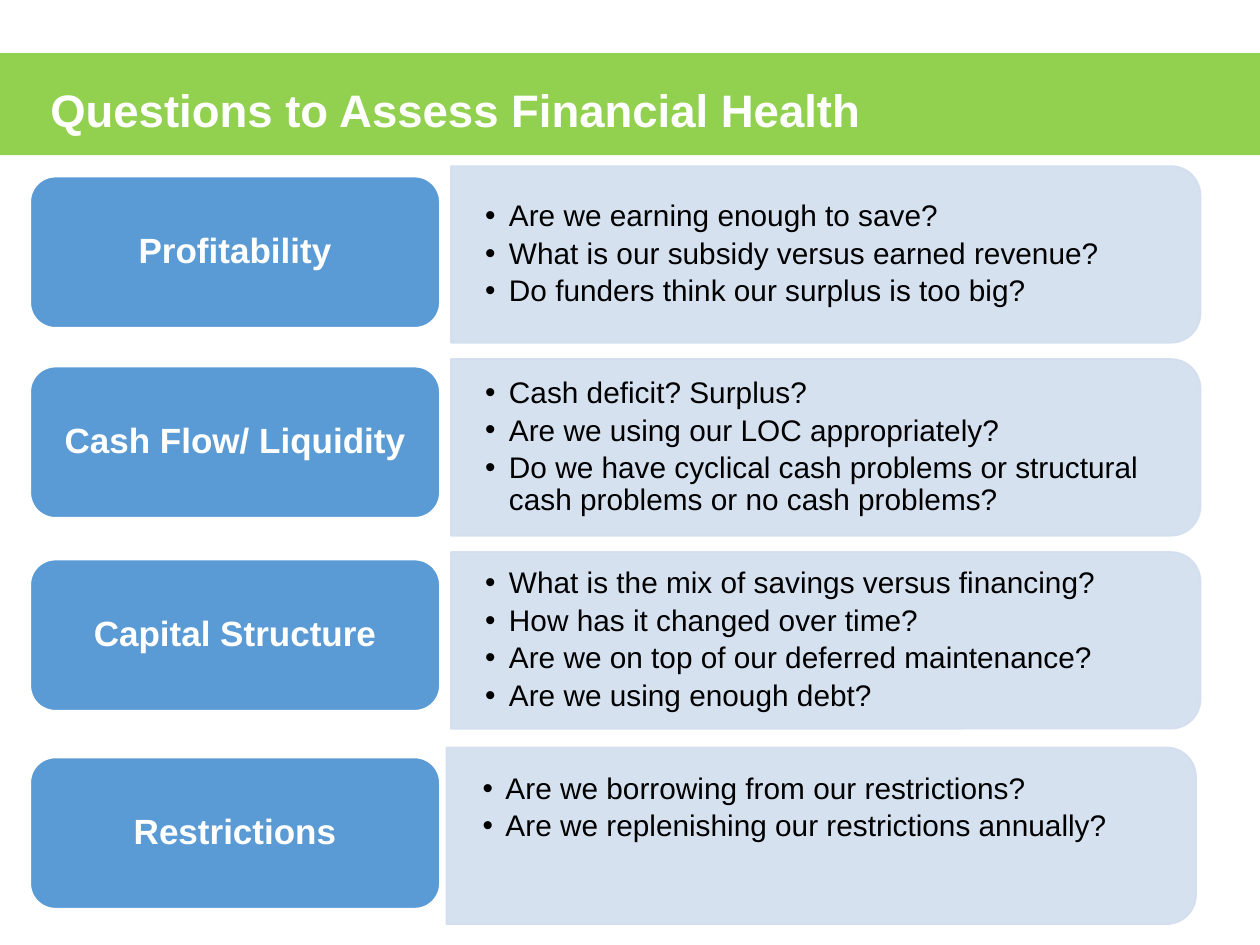
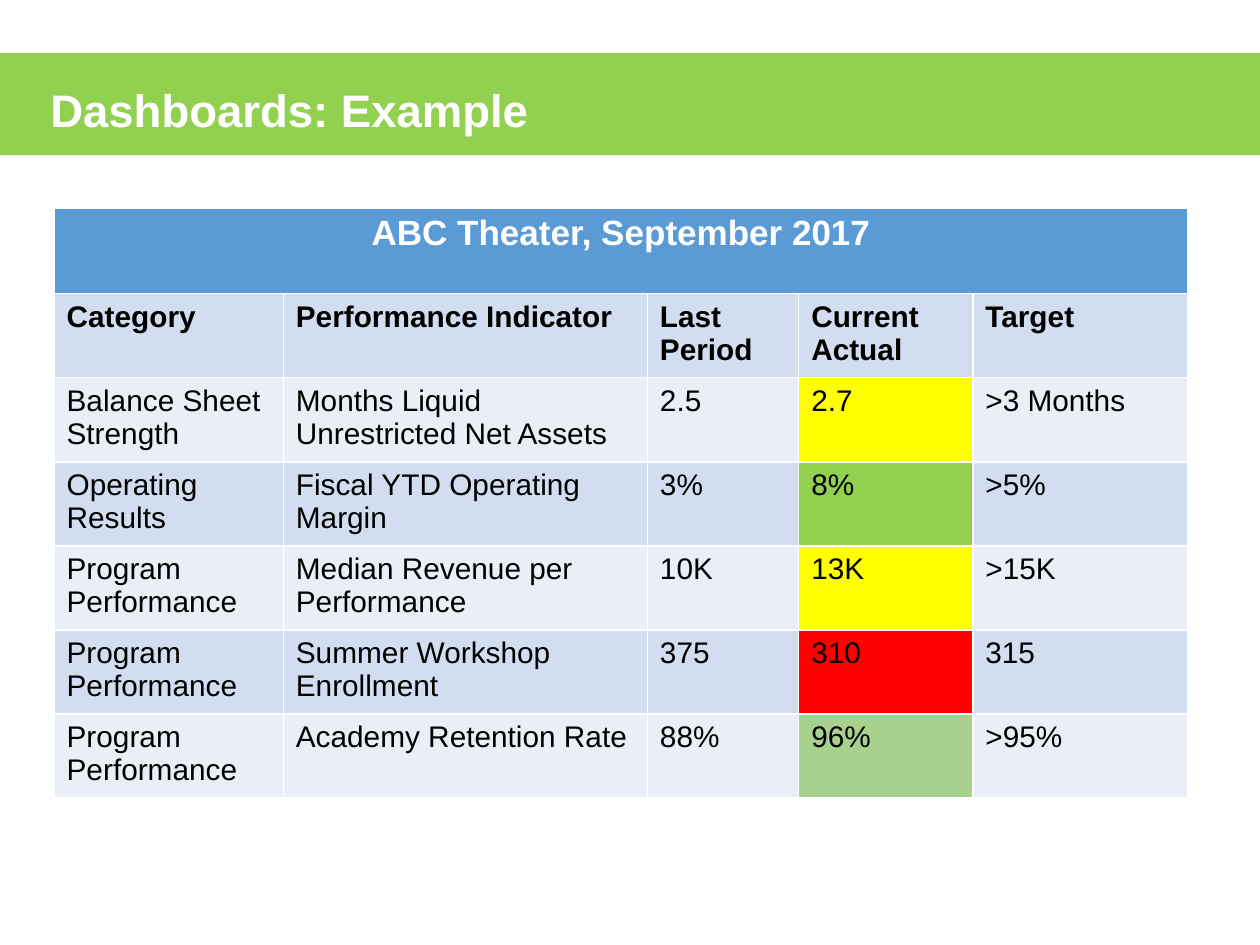
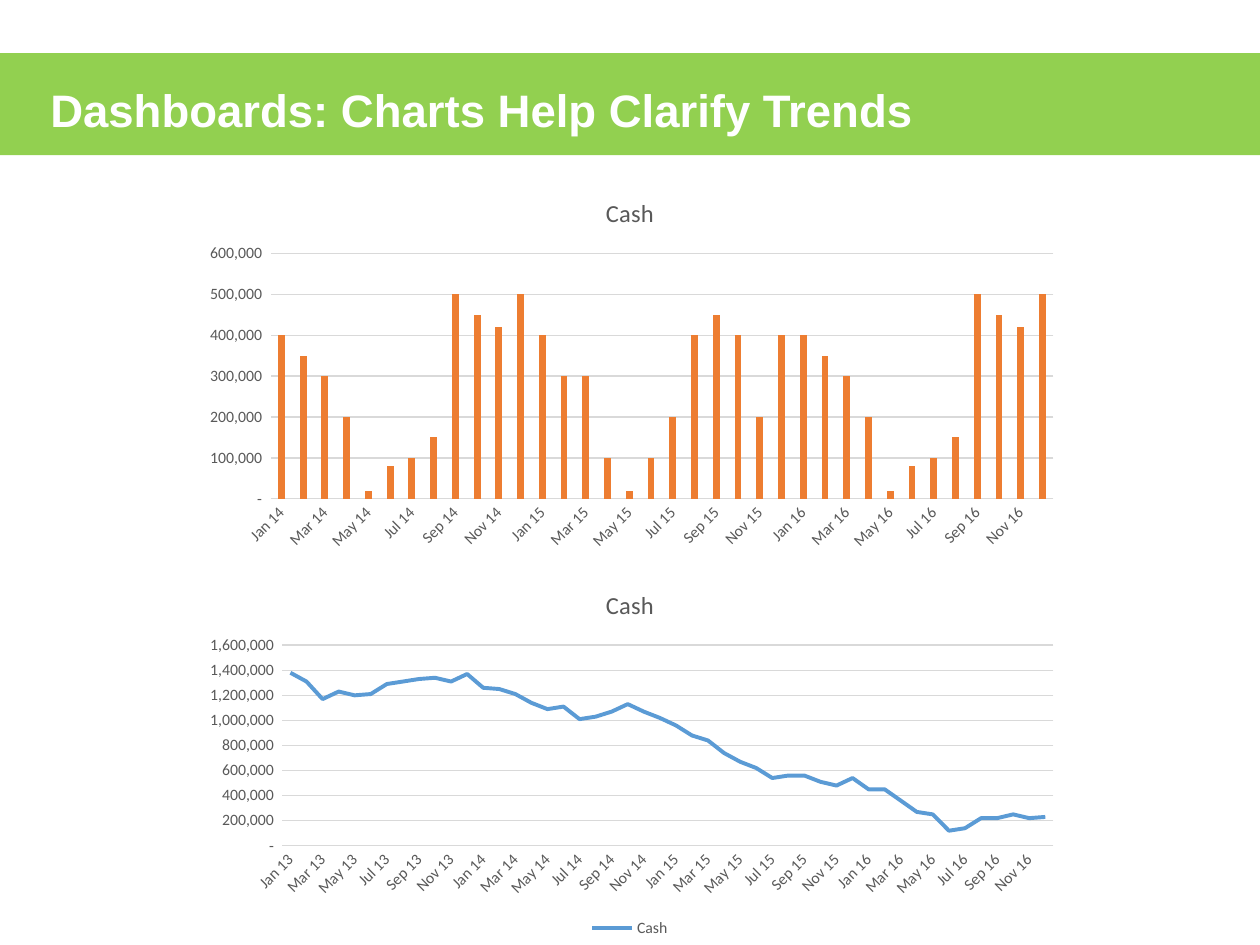
from dataclasses import dataclass
from itertools import product

from lxml import etree
from pptx import Presentation
from pptx import util as u
from pptx.chart.data import CategoryChartData
from pptx.dml.color import RGBColor
from pptx.enum import chart as ch
from pptx.enum import shapes, text
from pptx.oxml.ns import qn

WHITE = RGBColor(0xFF, 0xFF, 0xFF)
BLACK = RGBColor(0x00, 0x00, 0x00)
GREEN = RGBColor(0x92, 0xD0, 0x50)
BLUE = RGBColor(0x5B, 0x9B, 0xD5)
PALE_BLUE = RGBColor(0xD2, 0xDE, 0xEF)
PALEST_BLUE = RGBColor(0xEA, 0xEF, 0xF7)
YELLOW = RGBColor(0xFF, 0xFF, 0x00)
RED = RGBColor(0xFF, 0x00, 0x00)
SOFT_GREEN = RGBColor(0xA9, 0xD1, 0x8E)
ORANGE = RGBColor(0xED, 0x7D, 0x31)
CHART_TEXT = RGBColor(0x59, 0x59, 0x59)
CHART_LINE = RGBColor(0xD9, 0xD9, 0xD9)

SLIDE_WIDTH = 25.4
COMPARISON, TITLE_ONLY = 4, 5
ACCOUNTING = '_(* #,##0_);_(* \\(#,##0\\);_(* "-"_);_(@_)'
MONTHS = "Jan Feb Mar Apr May Jun Jul Aug Sep Oct Nov Dec".split()


@dataclass(frozen=True)
class Box:
    """A frame in centimetres."""
    left: float
    top: float
    width: float
    height: float

    def lengths(self) -> tuple:
        return tuple(map(u.Cm, (self.left, self.top, self.width, self.height)))

    def place(self, sp) -> None:
        sp.left, sp.top, sp.width, sp.height = self.lengths()


@dataclass(frozen=True)
class ListStyle:
    """Insets (left, top, right, bottom) and bullet indents in centimetres."""
    insets: tuple
    margin: float
    hanging: float


PANEL_LIST = ListStyle((0.69, 0.53, 0.86, 0.53), 0.48, 0.48)
LOOSE_LIST = ListStyle((0.08, 0.05, 0.08, 0.5), 1.09, 0.46)


@dataclass(frozen=True)
class Topic:
    name: str
    label_top: float
    panel: Box
    list_box: Box
    style: ListStyle
    questions: tuple


def panel_topic(name: str, label_top: float, panel_top: float, *questions: str) -> Topic:
    panel = Box(9.09, panel_top, 15.11, 3.56)
    return Topic(name, label_top, panel, panel, PANEL_LIST, questions)


TOPICS = (
    panel_topic("Profitability", 3.56, 3.35,
                "Are we earning enough to save?",
                "What is our subsidy versus earned revenue?",
                "Do funders think our surplus is too big?"),
    panel_topic("Cash Flow/ Liquidity", 7.39, 7.24,
                "Cash deficit? Surplus?",
                "Are we using our LOC appropriately?",
                "Do we have cyclical cash problems or structural cash problems or no cash problems?"),
    panel_topic("Capital Structure", 11.28, 11.13,
                "What is the mix of savings versus financing?",
                "How has it changed over time?",
                "Are we on top of our deferred maintenance?",
                "Are we using enough debt?"),
    Topic("Restrictions", 15.27, Box(9.0, 15.07, 15.11, 3.56),
          Box(9.02, 15.21, 14.96, 2.62), LOOSE_LIST,
          ("Are we borrowing from our restrictions?",
           "Are we replenishing our restrictions annually?")),
)

INDICATORS = (
    ("Category", "Performance Indicator", "Last Period", "Current Actual", "Target"),
    ("Balance Sheet Strength", "Months Liquid Unrestricted Net Assets", "2.5", "2.7", ">3 Months"),
    ("Operating Results", "Fiscal YTD Operating Margin", "3%", "8%", ">5%"),
    ("Program Performance", "Median Revenue per Performance", "10K", "13K", ">15K"),
    ("Program Performance", "Summer Workshop Enrollment", "375", "310", "315"),
    ("Program Performance", "Academy Retention Rate", "88%", "96%", ">95%"),
)
STATUS_COLORS = (PALE_BLUE, YELLOW, GREEN, YELLOW, RED, SOFT_GREEN)
STATUS_COLUMN = 3


@dataclass(frozen=True)
class CashChart:
    kind: ch.XL_CHART_TYPE
    box: Box
    years: range
    thousands: tuple
    top_value: int
    step: int


SEASONAL_CASH = CashChart(
    ch.XL_CHART_TYPE.COLUMN_CLUSTERED, Box(3.81, 3.58, 17.78, 7.67), range(14, 17),
    (400, 350, 300, 200, 20, 80, 100, 150, 500, 450, 420, 500,
     400, 300, 300, 100, 20, 100, 200, 400, 450, 400, 200, 400,
     400, 350, 300, 200, 20, 80, 100, 150, 500, 450, 420, 500),
    600_000, 100_000)
DECLINING_CASH = CashChart(
    ch.XL_CHART_TYPE.LINE, Box(3.81, 11.48, 17.78, 7.52), range(13, 17),
    (1380, 1310, 1170, 1230, 1200, 1210, 1290, 1310, 1330, 1340, 1310, 1370,
     1260, 1250, 1210, 1140, 1090, 1110, 1010, 1030, 1070, 1130, 1070, 1020,
     960, 880, 840, 740, 670, 620, 540, 560, 560, 510, 480, 540,
     450, 450, 360, 270, 250, 120, 140, 220, 220, 250, 220, 230),
    1_600_000, 200_000)


def set_font(font, size: float, color: RGBColor, bold: bool = False, name: str = "Arial") -> None:
    font.name, font.size, font.bold = name, u.Pt(size), bold
    font.color.rgb = color


def set_insets(tf, insets: tuple) -> None:
    tf.margin_left, tf.margin_top, tf.margin_right, tf.margin_bottom = map(u.Cm, insets)


def add_filled(slide, kind, box: Box, fill: RGBColor, line: RGBColor | None = None):
    sp = slide.shapes.add_shape(kind, *box.lengths())
    sp.shadow.inherit = False
    sp.fill.solid()
    sp.fill.fore_color.rgb = fill
    if line is None:
        sp.line.fill.background()
    else:
        sp.line.color.rgb = line
        sp.line.width = u.Pt(1)
    return sp


def add_titled_slide(prs, layout: int, title: str, title_width: float):
    slide = prs.slides.add_slide(prs.slide_layouts[layout])
    sp = slide.shapes.title
    band = add_filled(slide, shapes.MSO_SHAPE.RECTANGLE, Box(0, 1.07, SLIDE_WIDTH, 2.06), GREEN)
    sp._element.addprevious(band._element)
    Box(0.76, 1.52, title_width, 1.37).place(sp)
    tf = sp.text_frame
    tf.text = title
    tf.word_wrap = False
    tf.auto_size = text.MSO_AUTO_SIZE.SHAPE_TO_FIT_TEXT
    tf.vertical_anchor = text.MSO_ANCHOR.TOP
    p = tf.paragraphs[0]
    p.alignment = text.PP_ALIGN.LEFT
    set_font(p.font, 26, WHITE, bold=True)
    return slide


def add_panel(slide, box: Box):
    """Add a translucent panel whose right-hand corners are rounded."""
    upright = Box(box.left + (box.width - box.height) / 2,
                  box.top + (box.height - box.width) / 2, box.height, box.width)
    sp = add_filled(slide, shapes.MSO_SHAPE.ROUND_2_SAME_RECTANGLE, upright, PALE_BLUE, PALE_BLUE)
    sp.rotation = 90
    for color in sp._element.spPr.iter(qn("a:srgbClr")):
        etree.SubElement(color, qn("a:alpha"), val="90000")
    return sp


def add_label(slide, name: str, top: float) -> None:
    sp = add_filled(slide, shapes.MSO_SHAPE.ROUNDED_RECTANGLE, Box(0.61, top, 8.26, 3.05), BLUE, WHITE)
    tf = sp.text_frame
    tf.text = name
    tf.word_wrap = True
    tf.vertical_anchor = text.MSO_ANCHOR.MIDDLE
    set_insets(tf, (0.41, 0.28, 0.41, 0.28))
    p = tf.paragraphs[0]
    p.alignment = text.PP_ALIGN.CENTER
    p.line_spacing = 0.9
    set_font(p.font, 20, WHITE, bold=True)


def set_bullet(p, style: ListStyle) -> None:
    pPr = p._p.get_or_add_pPr()
    pPr.set("marL", str(u.Cm(style.margin)))
    pPr.set("indent", str(-u.Cm(style.hanging)))
    bullet = etree.Element(qn("a:buChar"), char="•")
    pPr.find(qn("a:defRPr")).addprevious(bullet)


def fill_list(sp, topic: Topic) -> None:
    topic.list_box.place(sp)
    tf = sp.text_frame
    tf.text = "\n".join(topic.questions)
    tf.word_wrap = True
    tf.auto_size = text.MSO_AUTO_SIZE.NONE
    tf.vertical_anchor = text.MSO_ANCHOR.MIDDLE
    set_insets(tf, topic.style.insets)
    for p in tf.paragraphs:
        p.alignment = text.PP_ALIGN.LEFT
        p.line_spacing = 0.9
        p.space_before, p.space_after = u.Pt(0), u.Pt(3)
        set_font(p.font, 17, BLACK)
        set_bullet(p, topic.style)


def build_questions(prs) -> None:
    slide = add_titled_slide(prs, COMPARISON, "Questions to Assess Financial Health", 17.02)
    bodies = [sp for sp in slide.placeholders if sp.placeholder_format.idx > 0]
    for topic, body in zip(TOPICS, bodies):
        body._element.addprevious(add_panel(slide, topic.panel)._element)
        fill_list(body, topic)
        add_label(slide, topic.name, topic.label_top)


def fill_cell(cell, value: str, fill: RGBColor, size: float = 17,
              color: RGBColor = BLACK, bold: bool = False) -> None:
    cell.fill.solid()
    cell.fill.fore_color.rgb = fill
    cell.text = value
    set_font(cell.text_frame.paragraphs[0].font, size, color, bold)


def build_dashboard(prs) -> None:
    slide = add_titled_slide(prs, TITLE_ONLY, "Dashboards: Example", 10.26)
    widths = (4.62, 7.34, 3.05, 3.51, 4.34)
    heights = (1.73,) + (1.6,) * len(INDICATORS)
    box = Box(1.09, 4.19, sum(widths), sum(heights))
    table = slide.shapes.add_table(len(heights), len(widths), *box.lengths()).table
    for column, width in zip(table.columns, widths):
        column.width = u.Cm(width)
    for row, height in zip(table.rows, heights):
        row.height = u.Cm(height)

    heading = table.cell(0, 0)
    heading.merge(table.cell(0, len(widths) - 1))
    fill_cell(heading, "ABC Theater, September 2017", BLUE, 20, WHITE, bold=True)
    heading.text_frame.paragraphs[0].alignment = text.PP_ALIGN.CENTER

    for r, c in product(range(len(INDICATORS)), range(len(widths))):
        stripe = PALEST_BLUE if r % 2 else PALE_BLUE
        fill = STATUS_COLORS[r] if c == STATUS_COLUMN else stripe
        fill_cell(table.cell(r + 1, c), INDICATORS[r][c], fill, bold=r == 0)


def set_chart_font(font, size: float) -> None:
    set_font(font, size, CHART_TEXT, name="Calibri")


def format_axes(chart, cash: CashChart) -> None:
    months, amounts = chart.category_axis, chart.value_axis
    for axis in (months, amounts):
        axis.major_tick_mark = axis.minor_tick_mark = ch.XL_TICK_MARK.NONE
        set_chart_font(axis.tick_labels.font, 9)
    months.has_major_gridlines = False
    amounts.has_major_gridlines = True
    for line in (months.format.line, amounts.major_gridlines.format.line):
        line.color.rgb = CHART_LINE
        line.width = u.Pt(0.75)
    amounts.format.line.fill.background()
    amounts.minimum_scale, amounts.maximum_scale = 0, cash.top_value
    amounts.major_unit = cash.step
    amounts.tick_labels.number_format = ACCOUNTING
    amounts.tick_labels.number_format_is_linked = False

    cat_ax = months._element
    cat_ax.find(qn("c:txPr")).find(qn("a:bodyPr")).set("rot", "-2700000")
    skip = etree.Element(qn("c:tickLblSkip"), val="2")
    cat_ax.find(qn("c:noMultiLvlLbl")).addprevious(skip)


def add_cash_chart(slide, cash: CashChart):
    data = CategoryChartData(number_format=ACCOUNTING)
    data.categories = [f"{month} {year}" for year, month in product(cash.years, MONTHS)]
    data.add_series("Cash", [1000 * value for value in cash.thousands])
    chart = slide.shapes.add_chart(cash.kind, *cash.box.lengths(), data).chart
    set_font(chart.font, 10, BLACK, name="Calibri")
    chart.has_legend = False
    chart.has_title = True
    tf = chart.chart_title.text_frame
    tf.text = "Cash"
    set_chart_font(tf.paragraphs[0].font, 14)
    chart.plots[0].vary_by_categories = False
    format_axes(chart, cash)
    return chart


def build_trends(prs) -> None:
    slide = add_titled_slide(prs, TITLE_ONLY, "Dashboards: Charts Help Clarify Trends", 18.08)

    plot = add_cash_chart(slide, SEASONAL_CASH).plots[0]
    plot.gap_width, plot.overlap = 219, -27
    bars = plot.series[0].format.fill
    bars.solid()
    bars.fore_color.rgb = ORANGE

    chart = add_cash_chart(slide, DECLINING_CASH)
    series = chart.plots[0].series[0]
    series.smooth = False
    series.format.line.color.rgb = BLUE
    series.format.line.width = u.Pt(2.25)
    chart.has_legend = True
    chart.legend.position = ch.XL_LEGEND_POSITION.BOTTOM
    chart.legend.include_in_layout = False
    set_chart_font(chart.legend.font, 9)


def main() -> None:
    prs = Presentation()
    prs.slide_width, prs.slide_height = u.Cm(SLIDE_WIDTH), u.Cm(19.05)
    build_questions(prs)
    build_dashboard(prs)
    build_trends(prs)
    prs.save("out.pptx")


if __name__ == "__main__":
    main()
